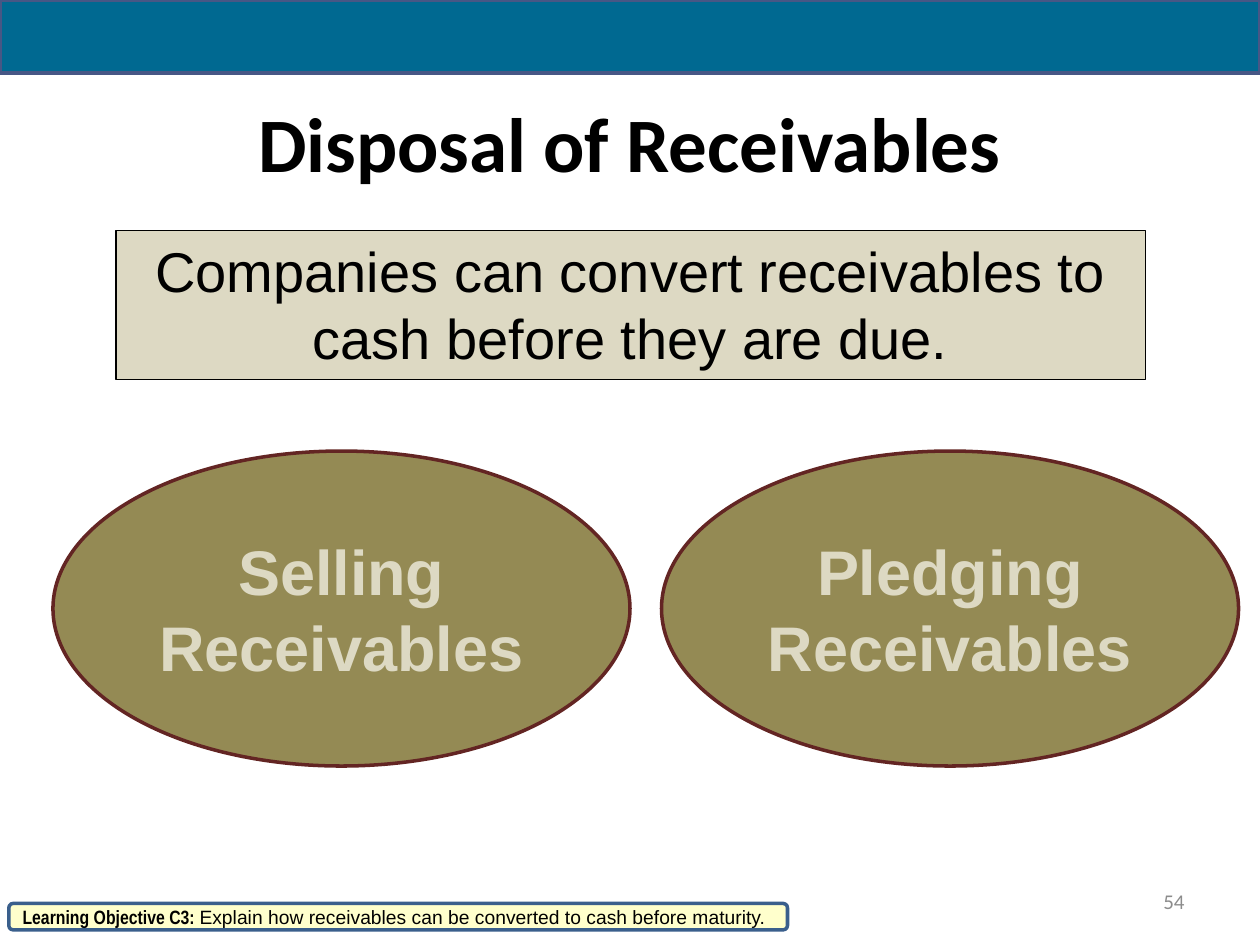
import pptx
import pptx.dml.color
import pptx.enum.shapes
import pptx.enum.text
import pptx.util

Inches = pptx.util.Inches
Pt = pptx.util.Pt
SHAPE = pptx.enum.shapes.MSO_SHAPE
ALIGN = pptx.enum.text.PP_ALIGN
ANCHOR = pptx.enum.text.MSO_ANCHOR


def rgb(value):
    """Return the colour for a hex string."""
    return pptx.dml.color.RGBColor.from_string(value)


def set_font(font, name, size, color, bold=False):
    """Format a paragraph or run font."""
    font.name, font.size, font.bold = name, Pt(size), bold
    font.color.rgb = rgb(color)


def set_text(sp, text, name, size, color, bold=False, align=ALIGN.CENTER, anchor=ANCHOR.MIDDLE):
    """Write one paragraph into a shape and return it."""
    tf = sp.text_frame
    tf.word_wrap = True
    tf.vertical_anchor = anchor
    p = tf.paragraphs[0]
    p.text = text
    p.alignment = align
    set_font(p.font, name, size, color, bold)
    return p


def add_panel(s, kind, box, fill, line, width):
    """Add a filled, outlined shape in the given box."""
    sp = s.shapes.add_shape(kind, *map(Inches, box))
    sp.shadow.inherit = False
    sp.fill.solid()
    sp.fill.fore_color.rgb = rgb(fill)
    sp.line.color.rgb = rgb(line)
    sp.line.width = Pt(width)
    return sp


def place_title(s, box, text):
    """Move and format the title placeholder."""
    sp = s.shapes.title
    sp.left, sp.top, sp.width, sp.height = map(Inches, box)
    set_text(sp, text, "Calibri", 44, "000000", bold=True)


def add_statement(s, box, text):
    """Add the statement panel below the title."""
    sp = add_panel(s, SHAPE.RECTANGLE, box, "DDD9C3", "000000", 0.75)
    set_text(sp, text, "Arial", 32, "000000", anchor=ANCHOR.TOP)


def add_options(s, box, labels, gap):
    """Add a row of equal ellipses that fills the box."""
    left, top, width, height = box
    w = (width - gap * (len(labels) - 1)) / len(labels)
    for i, label in enumerate(labels):
        sp = add_panel(s, SHAPE.OVAL, (left + i * (w + gap), top, w, height), "948A54", "632523", 2)
        set_text(sp, label, "Arial", 36, "DDD9C3", bold=True)


def add_objective(s, box, label, text):
    """Add the learning objective strip."""
    sp = add_panel(s, SHAPE.ROUNDED_RECTANGLE, box, "FFFFCC", "3A5F8C", 2)
    tf = sp.text_frame
    tf.margin_top = tf.margin_bottom = tf.margin_right = 0
    p = set_text(sp, "", "Arial", 11, "000000", align=ALIGN.LEFT)
    for part, name, bold in ((label, "Arial Narrow", True), (text, "Arial", False)):
        r = p.add_run()
        r.text = part
        set_font(r.font, name, 11, "000000", bold)


def add_page_number(s, box, number):
    """Add the page number."""
    sp = s.shapes.add_textbox(*map(Inches, box))
    set_text(sp, number, "Calibri", 12, "8C8C8C", align=ALIGN.RIGHT)


def main():
    """Build and save the slide."""
    prs = pptx.Presentation()
    prs.slide_width, prs.slide_height = Inches(10), Inches(7.5)
    s = prs.slides.add_slide(prs.slide_layouts[5])
    place_title(s, (0.5, 0.5, 9, 1.25), "Disposal of Receivables")
    add_statement(s, (0.92, 1.83, 8.17, 1.18),
                  "Companies can convert receivables to cash before they are due.")
    add_options(s, (0.42, 3.58, 9.41, 2.5), ("Selling Receivables", "Pledging Receivables"), 0.25)
    add_panel(s, SHAPE.RECTANGLE, (0, 0, 10, 0.58), "006991", "475785", 2.25)
    add_page_number(s, (7.17, 6.95, 2.33, 0.4), "54")
    add_objective(s, (0.07, 7.17, 6.18, 0.21), "Learning Objective C3: ",
                  "Explain how receivables can be converted to cash before maturity.")
    prs.save("out.pptx")


if __name__ == "__main__":
    main()
